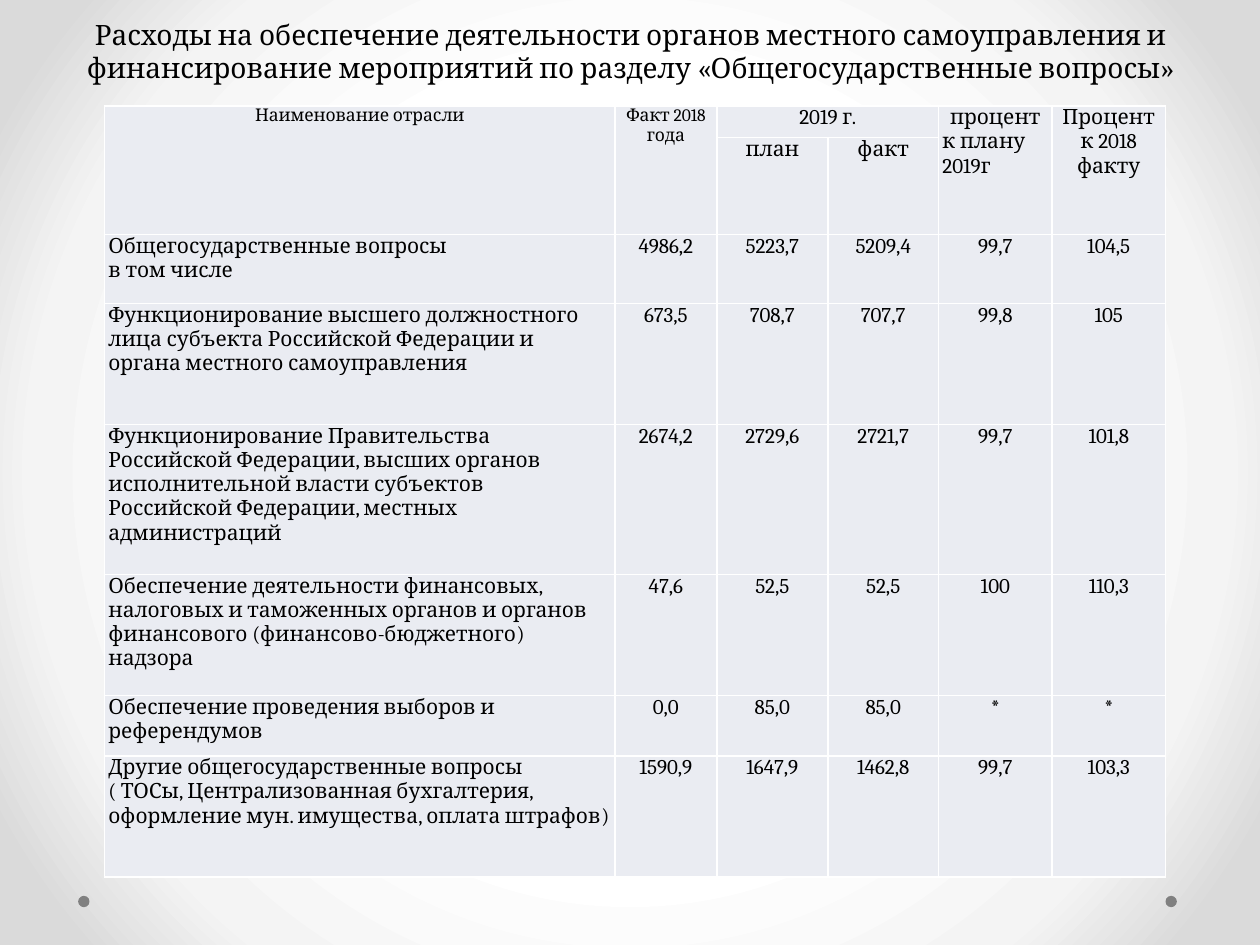
"""Build a slide with a table of local government spending."""
from typing import NamedTuple

from pptx import Presentation
from pptx.dml.color import RGBColor
from pptx.enum.shapes import MSO_SHAPE
from pptx.enum.text import MSO_ANCHOR, MSO_AUTO_SIZE, PP_ALIGN
from pptx.oxml import parse_xml
from pptx.oxml.ns import nsdecls
from pptx.util import Inches, Pt

OVAL = MSO_SHAPE.OVAL
BOTTOM = MSO_ANCHOR.BOTTOM
NO_FIT = MSO_AUTO_SIZE.NONE
LEFT, CENTER = PP_ALIGN.LEFT, PP_ALIGN.CENTER

BLACK = RGBColor(0x00, 0x00, 0x00)
WHITE = RGBColor(0xFF, 0xFF, 0xFF)
GRAY = RGBColor(0x80, 0x80, 0x80)
CELL_FILL = RGBColor(0xEA, 0xEC, 0xF2)
BG_STOPS = (
    (50, WHITE),
    (76, RGBColor(0xF4, 0xF4, 0xF4)),
    (92, RGBColor(0xDA, 0xDA, 0xDA)),
)
FONT = "Cambria"
COL_WIDTHS = (4.05, 0.81, 0.88, 0.88, 0.9, 0.9)
ROW_HEIGHTS = (0.25, 0.77, 0.55, 0.96, 1.19, 0.96, 0.48, 0.96)
TITLE = (
    "Расходы на обеспечение деятельности органов местного самоуправления и "
    "финансирование мероприятий по разделу «Общегосударственные вопросы»"
)


class Header(NamedTuple):
    row: int
    col: int
    text: str
    rows: int = 1
    cols: int = 1
    size: int = 12
    aligns: tuple = (CENTER, CENTER)


class Expense(NamedTuple):
    name: str
    values: tuple


HEADERS = (
    Header(0, 0, "Наименование отрасли", rows=2, size=10),
    Header(0, 1, "Факт 2018 года", rows=2, size=10),
    Header(0, 2, "2019 г.", cols=2),
    Header(0, 4, "процент\nк плану 2019г", rows=2, aligns=(CENTER, LEFT)),
    Header(0, 5, "Процент к 2018\nфакту", rows=2),
    Header(1, 2, "план"),
    Header(1, 3, "факт"),
)
EXPENSES = (
    Expense("Общегосударственные вопросы\nв том числе",
            ("4986,2", "5223,7", "5209,4", "99,7", "104,5")),
    Expense("Функционирование высшего должностного лица субъекта "
            "Российской Федерации и органа местного самоуправления",
            ("673,5", "708,7", "707,7", "99,8", "105")),
    Expense("Функционирование Правительства Российской Федерации, высших "
            "органов исполнительной власти субъектов Российской Федерации, "
            "местных администраций",
            ("2674,2", "2729,6", "2721,7", "99,7", "101,8")),
    Expense("Обеспечение деятельности финансовых, налоговых и таможенных "
            "органов и органов финансового (финансово-бюджетного) надзора",
            ("47,6", "52,5", "52,5", "100", "110,3")),
    Expense("Обеспечение проведения выборов и референдумов",
            ("0,0", "85,0", "85,0", "*", "*")),
    Expense("Другие общегосударственные вопросы\v( ТОСы, Централизованная "
            "бухгалтерия, оформление мун. имущества, оплата штрафов)",
            ("1590,9", "1647,9", "1462,8", "99,7", "103,3")),
)


def set_background(s) -> None:
    stops = "".join(
        f'<a:gs pos="{pos * 1000}"><a:srgbClr val="{color}"/></a:gs>'
        for pos, color in BG_STOPS
    )
    s.element.cSld.insert(0, parse_xml(
        f'<p:bg {nsdecls("p", "a")}><p:bgPr><a:gradFill rotWithShape="1">'
        f'<a:gsLst>{stops}</a:gsLst><a:path path="circle">'
        '<a:fillToRect l="50000" t="50000" r="50000" b="50000"/></a:path>'
        '</a:gradFill><a:effectLst/></p:bgPr></p:bg>'
    ))


def set_font(p, size: int) -> None:
    p.font.name = FONT
    p.font.size = Pt(size)
    p.font.color.rgb = BLACK


def add_dot(s, left: float) -> None:
    sp = s.shapes.add_shape(OVAL, Inches(left), Inches(7.11), Inches(0.09), Inches(0.09))
    sp.shadow.inherit = False
    sp.fill.solid()
    sp.fill.fore_color.rgb = GRAY
    sp.line.fill.background()


def add_title(s) -> None:
    sp = s.shapes.title
    sp.left, sp.top, sp.width, sp.height = map(Inches, (0.51, -0.34, 9, 1.06))
    tf = sp.text_frame
    tf.text = TITLE
    tf.auto_size = NO_FIT
    tf.vertical_anchor = BOTTOM
    p = tf.paragraphs[0]
    p.alignment = CENTER
    set_font(p, 16)


def style_cell(cell) -> None:
    cell.margin_left = cell.margin_right = Inches(0.03)
    cell.margin_top = cell.margin_bottom = 0
    cell.fill.solid()
    cell.fill.fore_color.rgb = CELL_FILL
    tcPr = cell._tc.get_or_add_tcPr()
    for i, side in enumerate("LRTB"):
        tcPr.insert(i, parse_xml(
            f'<a:ln{side} {nsdecls("a")} w="{Pt(1)}"><a:solidFill>'
            f'<a:srgbClr val="{WHITE}"/></a:solidFill></a:ln{side}>'
        ))


def write_cell(cell, text: str, aligns: tuple, size: int = 12) -> None:
    cell.text = text
    for p, align in zip(cell.text_frame.paragraphs, aligns):
        p.alignment = align
        set_font(p, size)


def add_expense_table(s) -> None:
    table = s.shapes.add_table(
        len(ROW_HEIGHTS), len(COL_WIDTHS), Inches(0.83), Inches(0.84),
        Inches(sum(COL_WIDTHS)), Inches(sum(ROW_HEIGHTS)),
    ).table
    table.first_row = table.horz_banding = False
    for col, width in zip(table.columns, COL_WIDTHS):
        col.width = Inches(width)
    for row, height in zip(table.rows, ROW_HEIGHTS):
        row.height = Inches(height)
    for cell in table.iter_cells():
        style_cell(cell)
    for h in HEADERS:
        cell = table.cell(h.row, h.col)
        if h.rows * h.cols > 1:
            cell.merge(table.cell(h.row + h.rows - 1, h.col + h.cols - 1))
        write_cell(cell, h.text, h.aligns, h.size)
    for i, expense in enumerate(EXPENSES, start=2):
        write_cell(table.cell(i, 0), expense.name, (LEFT, LEFT))
        for j, value in enumerate(expense.values, start=1):
            write_cell(table.cell(i, j), value, (CENTER,))


def main() -> None:
    prs = Presentation()
    prs.slide_width, prs.slide_height = Inches(10), Inches(7.5)
    s = prs.slides.add_slide(prs.slide_layouts[5])
    set_background(s)
    for left in (9.25, 0.62):
        add_dot(s, left)
    add_title(s)
    add_expense_table(s)
    prs.save("out.pptx")


if __name__ == "__main__":
    main()
